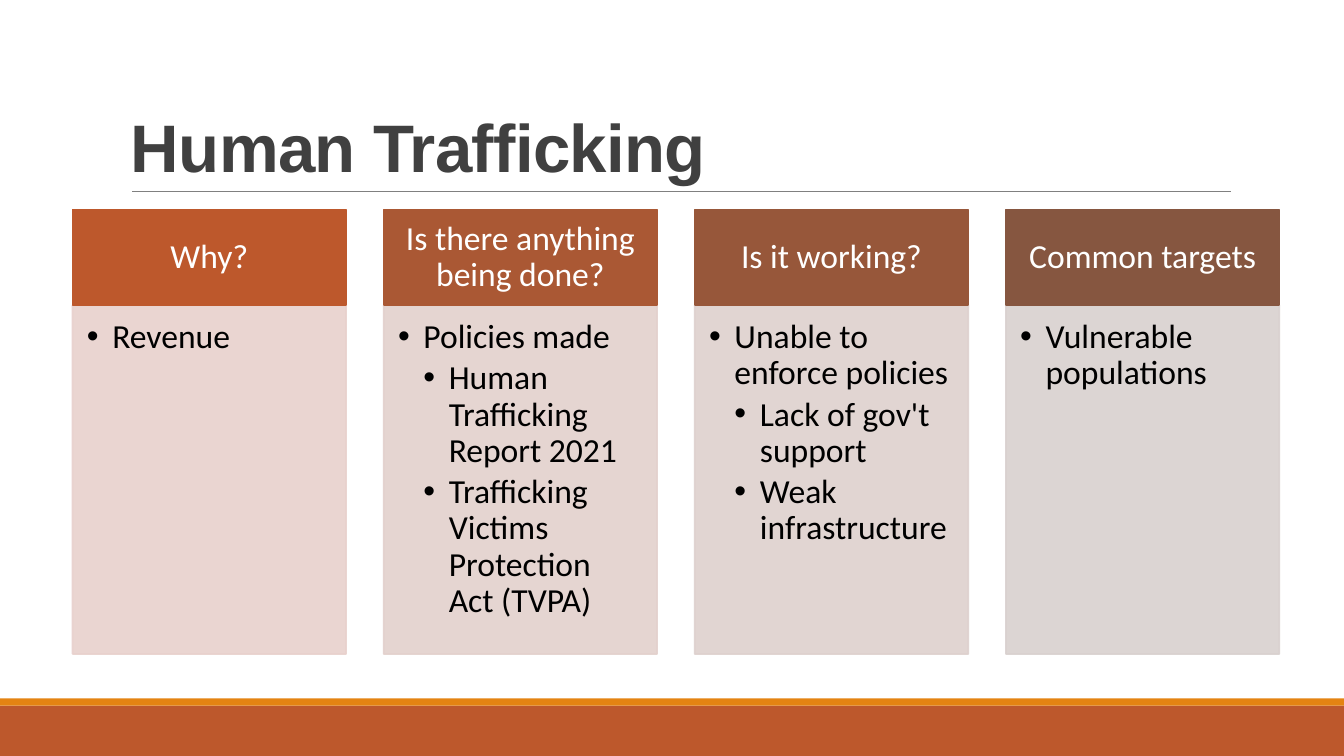
from dataclasses import dataclass

from lxml import etree
from pptx import Presentation
from pptx.dml.color import RGBColor
from pptx.enum.shapes import MSO_CONNECTOR, MSO_SHAPE
from pptx.enum.text import MSO_ANCHOR, MSO_AUTO_SIZE, PP_ALIGN
from pptx.oxml.ns import qn
from pptx.shapes.autoshape import Shape
from pptx.slide import Slide
from pptx.text.text import TextFrame, _Paragraph
from pptx.util import Cm, Pt

RECTANGLE = MSO_SHAPE.RECTANGLE
STRAIGHT = MSO_CONNECTOR.STRAIGHT
TOP, MIDDLE, BOTTOM = MSO_ANCHOR.TOP, MSO_ANCHOR.MIDDLE, MSO_ANCHOR.BOTTOM
LEFT, CENTER = PP_ALIGN.LEFT, PP_ALIGN.CENTER
FIXED_SIZE = MSO_AUTO_SIZE.NONE
COMPARISON_LAYOUT = 4


@dataclass(frozen=True)
class Theme:
    title_font: str = "Arial"
    text_font: str = "Calibri"
    title_size: float = 48
    text_size: float = 24
    title: str = "404040"
    rule: str = "808080"
    band: str = "BD582C"
    stripe: str = "E48312"
    heading: str = "FFFFFF"
    text: str = "000000"


@dataclass(frozen=True)
class Box:
    left: float
    top: float
    width: float
    height: float


@dataclass(frozen=True)
class Bullet:
    text: str
    level: int = 0


@dataclass(frozen=True)
class Column:
    heading: str
    heading_fill: str
    list_fill: str
    bullets: tuple[Bullet, ...]


THEME = Theme()
PAGE_WIDTH, PAGE_HEIGHT = 33.87, 19.05
COLUMN_LEFT, COLUMN_STEP, COLUMN_WIDTH = 1.83, 7.84, 6.89
HEADING_TOP, HEADING_HEIGHT = 5.28, 2.41
LIST_HEIGHT = 8.79
BULLET_INDENT = 0.64

COLUMNS = (
    Column("Why?", "BD582C", "E8D1CD", (Bullet("Revenue"),)),
    Column("Is there anything being done?", "AA5834", "E3D1CD", (
        Bullet("Policies made"),
        Bullet("Human Trafficking Report 2021", 1),
        Bullet("Trafficking Victims Protection Act (TVPA)", 1),
    )),
    Column("Is it working?", "97573A", "DED1CE", (
        Bullet("Unable to enforce policies"),
        Bullet("Lack of gov't support", 1),
        Bullet("Weak infrastructure", 1),
    )),
    Column("Common targets", "865640", "D9D1CF", (Bullet("Vulnerable populations"),)),
)


def place(shape: Shape, box: Box) -> None:
    shape.left, shape.top = Cm(box.left), Cm(box.top)
    shape.width, shape.height = Cm(box.width), Cm(box.height)


def paint(shape: Shape, color: str, outlined: bool) -> None:
    shape.fill.solid()
    shape.fill.fore_color.rgb = RGBColor.from_string(color)
    if outlined:
        shape.line.color.rgb = RGBColor.from_string(color)
        shape.line.width = Pt(1.25)
    else:
        shape.line.fill.background()


def set_opacity(shape: Shape, percent: int) -> None:
    for color in shape._element.spPr.iter(qn("a:srgbClr")):
        etree.SubElement(color, qn("a:alpha"), val=str(percent * 1000))


def add_rectangle(page: Slide, box: Box, color: str, outlined: bool = False) -> Shape:
    shape = page.shapes.add_shape(
        RECTANGLE, Cm(box.left), Cm(box.top), Cm(box.width), Cm(box.height))
    shape.shadow.inherit = False
    paint(shape, color, outlined)
    return shape


def set_frame(frame: TextFrame, anchor: MSO_ANCHOR,
              insets: tuple[float, float, float, float]) -> None:
    frame.word_wrap = True
    frame.auto_size = FIXED_SIZE
    frame.vertical_anchor = anchor
    frame.margin_left, frame.margin_top, frame.margin_right, frame.margin_bottom = map(Cm, insets)


def write(para: _Paragraph, text: str, font: str, size: float, color: str,
          bold: bool = False, tracking: float = 0) -> None:
    span = para.add_run()
    span.text = text
    span.font.name = font
    span.font.size = Pt(size)
    span.font.bold = bold
    span.font.color.rgb = RGBColor.from_string(color)
    if tracking:
        span.font._element.set("spc", str(round(tracking * 100)))


def space(para: _Paragraph, alignment: PP_ALIGN, lines: float, after: float = 0) -> None:
    para.alignment = alignment
    para.line_spacing = lines
    para.space_before = Pt(0)
    para.space_after = Pt(after)


def add_bullet_mark(para: _Paragraph, level: int) -> None:
    properties = para._element.get_or_add_pPr()
    properties.set("marL", str(Cm(BULLET_INDENT * (level + 1))))
    properties.set("indent", str(-Cm(BULLET_INDENT)))
    etree.SubElement(properties, qn("a:buFont"), typeface="Arial")
    etree.SubElement(properties, qn("a:buChar"), char="•")


def draw_frame(page: Slide) -> None:
    add_rectangle(page, Box(0, 17.78, PAGE_WIDTH, 1.27), THEME.band)
    add_rectangle(page, Box(0, 17.6, PAGE_WIDTH, 0.18), THEME.stripe)
    rule = page.shapes.add_connector(STRAIGHT, Cm(3.33), Cm(4.83), Cm(31.01), Cm(4.83))
    rule.line.color.rgb = RGBColor.from_string(THEME.rule)
    rule.line.width = Pt(0.5)
    etree.SubElement(rule._element.spPr, qn("a:effectLst"))


def draw_title(title: Shape, text: str) -> None:
    place(title, Box(3.05, 0.79, 27.94, 4.04))
    set_frame(title.text_frame, BOTTOM, (0.25, 0.13, 0.25, 0.13))
    para = title.text_frame.paragraphs[0]
    space(para, LEFT, 0.85)
    write(para, text, THEME.title_font, THEME.title_size, THEME.title, True, -0.5)


def draw_heading(page: Slide, column: Column, left: float) -> None:
    box = Box(left, HEADING_TOP, COLUMN_WIDTH, HEADING_HEIGHT)
    heading = add_rectangle(page, box, column.heading_fill, outlined=True)
    set_frame(heading.text_frame, MIDDLE, (0.48, 0.28, 0.48, 0.28))
    para = heading.text_frame.paragraphs[0]
    space(para, CENTER, 0.9)
    write(para, column.heading, THEME.text_font, THEME.text_size, THEME.heading)


def draw_list(body: Shape, column: Column, left: float) -> None:
    place(body, Box(left, HEADING_TOP + HEADING_HEIGHT, COLUMN_WIDTH, LIST_HEIGHT))
    paint(body, column.list_fill, outlined=True)
    set_opacity(body, 90)
    frame = body.text_frame
    set_frame(frame, TOP, (0.36, 0.36, 0.48, 0.53))
    for index, bullet in enumerate(column.bullets):
        para = frame.add_paragraph() if index else frame.paragraphs[0]
        para.level = bullet.level
        space(para, LEFT, 0.9, THEME.text_size * 0.15)
        add_bullet_mark(para, bullet.level)
        write(para, bullet.text, THEME.text_font, THEME.text_size, THEME.text)


def main() -> None:
    deck = Presentation()
    deck.slide_width, deck.slide_height = Cm(PAGE_WIDTH), Cm(PAGE_HEIGHT)
    page = deck.slides.add_slide(deck.slide_layouts[COMPARISON_LAYOUT])
    title, *bodies = page.placeholders
    draw_frame(page)
    draw_title(title, "Human Trafficking")
    for index, (column, body) in enumerate(zip(COLUMNS, bodies)):
        left = COLUMN_LEFT + index * COLUMN_STEP
        draw_heading(page, column, left)
        draw_list(body, column, left)
    deck.save("out.pptx")


if __name__ == "__main__":
    main()
